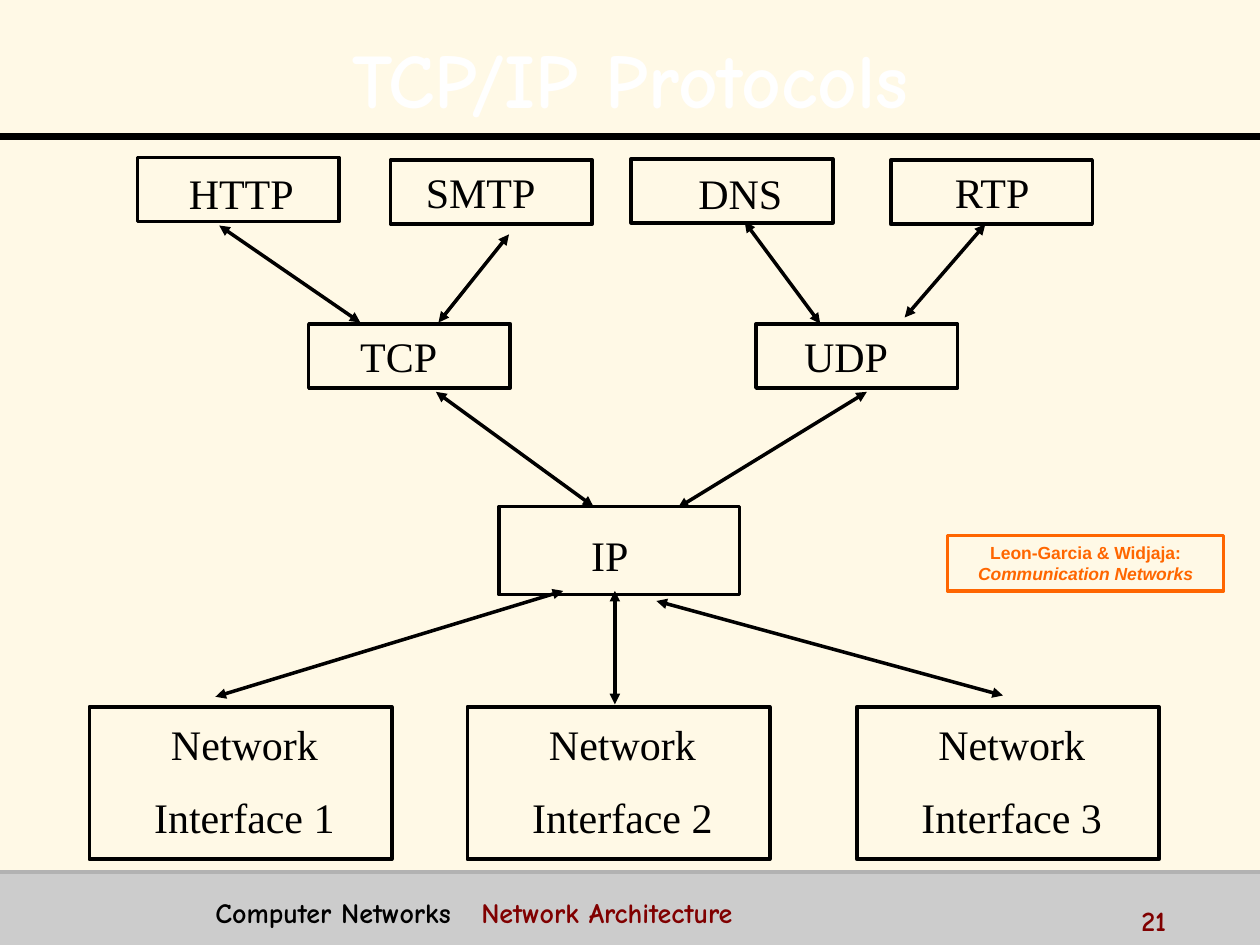
from pptx import Presentation
from pptx.dml.color import RGBColor
from pptx.enum.shapes import MSO_CONNECTOR as CONN, MSO_SHAPE as SHAPE
from pptx.enum.text import MSO_ANCHOR as ANCHOR, PP_ALIGN as ALIGN
from pptx.oxml.ns import qn
from pptx.util import Inches, Pt
from lxml.etree import SubElement

THEME = {
    "bg": "FFF9E6", "band": "CCCCCC", "rule": "B2B2B2", "ink": "000000",
    "title": {"name": "Comic Neue", "size": 44, "color": "FFFFFF", "bold": True},
    "label": {"name": "Times New Roman", "size": 24, "color": "000000"},
    "footer": {"name": "Comic Neue", "size": 16, "color": "000000", "bold": True},
    "accent": {"name": "Comic Neue", "size": 16, "color": "800000", "bold": True},
    "note": {"name": "Arial", "size": 10, "color": "FF6600", "bold": True},
    "line": 2, "head_line": 4, "label_gap": 13,
}

TITLE = "TCP/IP Protocols"
COURSE, CHAPTER, PAGE = "Computer Networks", "Network Architecture", "21"
SOURCE, BOOK = "Leon-Garcia & Widjaja:", "Communication Networks"

BOX, IP_BOX, NET_BOX = (1.6, 0.51), (1.91, 0.7), (2.4, 1.21)
# label lines, box corner, box size, label position and size
NODES = [
    (["HTTP"], (1.09, 1.25), BOX, (1.4, 1.28, 1.03, 0.5)),
    (["SMTP"], (3.1, 1.27), BOX, (3.25, 1.27, 1.13, 0.5)),
    (["DNS"], (5.01, 1.26), BOX, (5.42, 1.28, 0.91, 0.5)),
    (["RTP"], (7.07, 1.27), BOX, (7.44, 1.27, 0.87, 0.5)),
    (["TCP"], (2.45, 2.57), BOX, (2.76, 2.57, 0.81, 0.5)),
    (["UDP"], (6, 2.57), BOX, (6.28, 2.57, 0.87, 0.5)),
    (["IP"], (3.96, 4.02), IP_BOX, (4.59, 4.15, 0.5, 0.5)),
] + [
    (["Network", f"Interface {i}"], (x, 5.61), NET_BOX, (x + 0.26, 5.64, 1.94, 1.1))
    for i, x in enumerate((0.71, 3.71, 6.8), 1)
]
ARROWS = [
    (1.74, 1.79, 2.86, 2.56),  # HTTP - TCP
    (3.48, 2.56, 4.04, 1.86),  # TCP - SMTP
    (6.51, 2.57, 5.91, 1.76),  # UDP - DNS
    (7.18, 2.52, 7.82, 1.78),  # UDP - RTP
    (4.71, 4.02, 3.46, 3.11),  # IP - TCP
    (5.38, 4.03, 6.88, 3.11),  # IP - UDP
    (1.71, 5.53, 4.47, 4.69),  # interface 1 - IP
    (4.88, 5.59, 4.88, 4.69),  # interface 2 - IP
    (7.96, 5.52, 5.21, 4.77),  # interface 3 - IP
]


def inches(values):
    return [Inches(v) for v in values]


def add_run(p, text, style, **extra):
    r = p.add_run()
    r.text = text
    for key, value in {**style, **extra}.items():
        if key == "color":
            r.font.color.rgb = RGBColor.from_string(value)
        else:
            setattr(r.font, key, Pt(value) if key == "size" else value)


def add_rect(s, at, fill=None, line=None):
    sp = s.shapes.add_shape(SHAPE.RECTANGLE, *inches(at))
    sp.shadow.inherit = False
    if fill:
        sp.fill.solid()
        sp.fill.fore_color.rgb = RGBColor.from_string(fill)
    else:
        sp.fill.background()
    if line:
        sp.line.color.rgb = RGBColor.from_string(line)
        sp.line.width = Pt(THEME["line"])
    else:
        sp.line.fill.background()
    return sp


def add_line(s, ends, color, width, arrows=False):
    c = s.shapes.add_connector(CONN.STRAIGHT, *inches(ends))
    c.line.color.rgb = RGBColor.from_string(color)
    c.line.width = Pt(width)
    if arrows:
        ln = c.line.fill._xPr
        for end in ("a:headEnd", "a:tailEnd"):
            SubElement(ln, qn(end), type="triangle")
    SubElement(c._element.spPr, qn("a:effectLst"))


def add_text(s, at, wrap=True, anchor=ANCHOR.TOP):
    tf = s.shapes.add_textbox(*inches(at)).text_frame
    tf.word_wrap, tf.vertical_anchor = wrap, anchor
    return tf


def add_node(s, lines, corner, size, label_at):
    add_rect(s, corner + size, line=THEME["ink"])
    tf = add_text(s, label_at, wrap=False, anchor=ANCHOR.MIDDLE)
    for i, text in enumerate(lines):
        p = tf.add_paragraph() if i else tf.paragraphs[0]
        p.alignment = ALIGN.CENTER
        if i:
            p.space_before = Pt(THEME["label_gap"])
        add_run(p, text, THEME["label"])


def add_title(s):
    sp = s.shapes.title
    sp.left, sp.top, sp.width, sp.height = inches((0.2, 0.13, 9.61, 0.87))
    sp.text_frame.vertical_anchor = ANCHOR.TOP
    p = sp.text_frame.paragraphs[0]
    p.alignment, p.line_spacing = ALIGN.CENTER, 1.1
    add_run(p, TITLE, THEME["title"])


def add_note(s):
    tf = add_rect(s, (7.52, 4.25, 2.19, 0.44), line=THEME["note"]["color"]).text_frame
    tf.word_wrap, tf.vertical_anchor = True, ANCHOR.MIDDLE
    for p, text, italic in ((tf.paragraphs[0], SOURCE, False),
                            (tf.add_paragraph(), BOOK, True)):
        p.alignment = ALIGN.CENTER
        add_run(p, text, THEME["note"], italic=italic)


def add_footer(s):
    tf = add_text(s, (1.53, 7.06, 7.28, 0.31))
    tf.margin_left = Inches(0.18)
    p = tf.paragraphs[0]
    tabs = SubElement(p._p.get_or_add_pPr(), qn("a:tabLst"))
    SubElement(tabs, qn("a:tab"), pos=str(Inches(2.11)), algn="l")
    add_run(p, COURSE + "\t", THEME["footer"])
    add_run(p, CHAPTER, THEME["accent"])
    page = add_text(s, (8.96, 7.12, 1, 0.25))
    add_run(page.paragraphs[0], PAGE, THEME["accent"])


def main():
    prs = Presentation()
    prs.slide_width, prs.slide_height = inches((10, 7.5))
    s = prs.slides.add_slide(prs.slide_layouts[5])
    s.background.fill.solid()
    s.background.fill.fore_color.rgb = RGBColor.from_string(THEME["bg"])

    add_rect(s, (0, 6.92, 10, 0.58), fill=THEME["band"])
    add_line(s, (0, 1.08, 10, 1.08), THEME["ink"], THEME["head_line"])
    add_line(s, (0, 6.92, 10, 6.92), THEME["rule"], THEME["line"])
    add_title(s)
    for node in NODES:
        add_node(s, *node)
    for ends in ARROWS:
        add_line(s, ends, THEME["ink"], THEME["line"], arrows=True)
    add_note(s)
    add_footer(s)
    prs.save("out.pptx")


if __name__ == "__main__":
    main()
